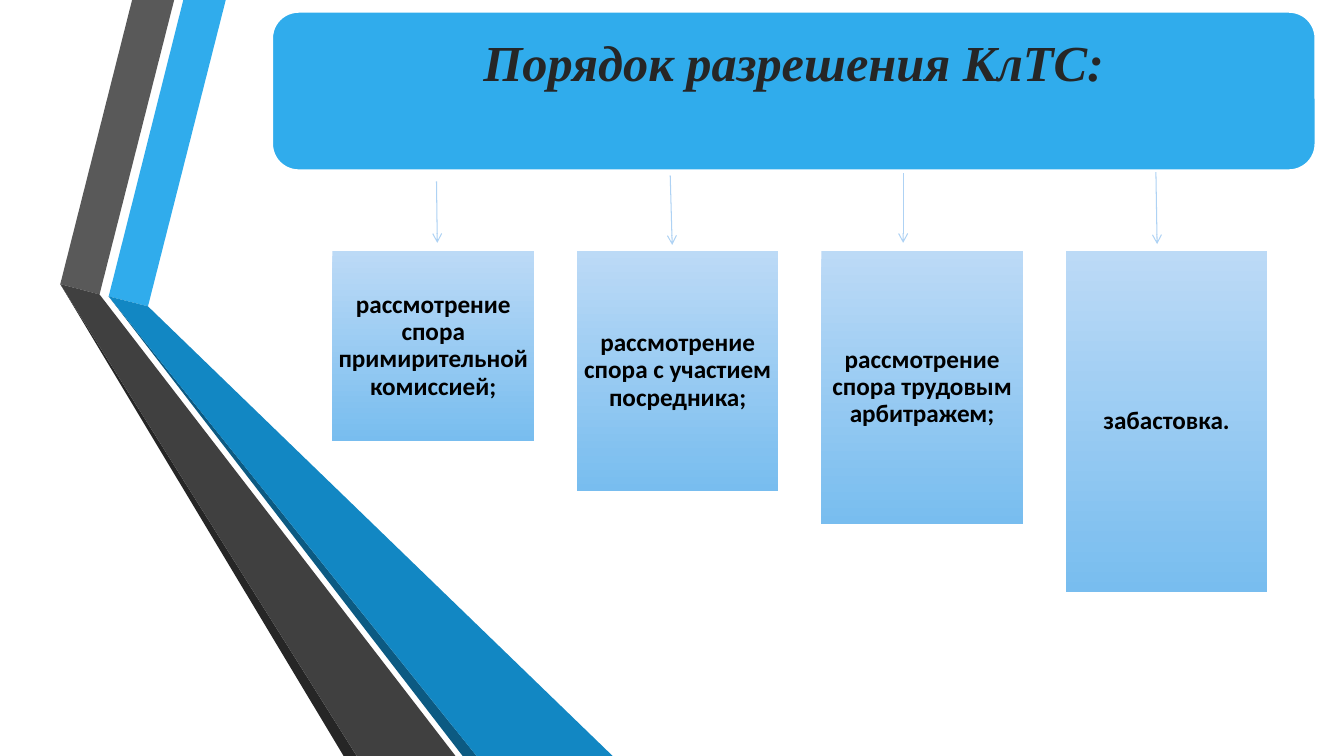
import pptx
import pptx.dml.color
import pptx.enum.shapes
import pptx.enum.text
import pptx.oxml.ns
import pptx.util
from lxml import etree

Cm = pptx.util.Cm
Pt = pptx.util.Pt
SHAPE = pptx.enum.shapes.MSO_SHAPE
ANCHOR = pptx.enum.text.MSO_ANCHOR

BANNER = (6.86, 0.3, 26.29, 3.99)
STEP_LEFT, STEP_TOP, STEP_WIDTH, STEP_PITCH = 8.38, 6.32, 5.08, 6.16

RIBBONS = [
    ("30ACEC", [(2.74, 7.47), (3.73, 7.72), (5.69, 0), (4.62, 0)]),
    ("595959", [(2.51, 7.42), (4.39, 0), (3.33, 0), (1.52, 7.16)]),
    ("262626", [(1.52, 7.16), (8.66, 19.05), (8.99, 19.05)]),
    ("0C5A82", [(2.74, 7.47), (11.66, 19.05), (12.01, 19.05)]),
    ("1287C3", [(2.74, 7.47), (12.01, 19.05), (15.44, 19.05), (3.73, 7.72)]),
    ("404040", [(1.52, 7.16), (8.99, 19.05), (11.48, 19.05), (2.51, 7.42)]),
]
# Text, box height, arrow start, arrow end
STEPS = [
    ("рассмотрение спора примирительной комиссией;", 4.8, (11, 4.57), (11.02, 6.12)),
    ("рассмотрение спора с участием посредника;", 6.05, (16.89, 4.42), (16.94, 6.17)),
    ("рассмотрение спора трудовым арбитражем;", 6.88, (22.76, 4.37), (22.76, 6.12)),
    ("забастовка.", 8.59, (29.13, 4.34), (29.16, 6.15)),
]


def rgb(value):
    return pptx.dml.color.RGBColor.from_string(value)


def fill_solid(sp, color):
    sp.shadow.inherit = False
    sp.fill.solid()
    sp.fill.fore_color.rgb = rgb(color)


def set_text(sp, text, font, size, color, anchor, inset, top_inset, italic=False):
    tf = sp.text_frame
    tf.text = text
    tf.word_wrap = True
    tf.auto_size = pptx.enum.text.MSO_AUTO_SIZE.NONE
    tf.vertical_anchor = anchor
    tf.margin_left = tf.margin_right = tf.margin_bottom = Cm(inset)
    tf.margin_top = Cm(top_inset)
    p = tf.paragraphs[0]
    p.alignment = pptx.enum.text.PP_ALIGN.CENTER
    p.line_spacing = 0.9
    p.space_before = Pt(0)
    p.font.name = font
    p.font.size = Pt(size)
    p.font.bold = True
    p.font.italic = italic
    p.font.color.rgb = rgb(color)


def add_ribbon(s, color, points):
    start, *rest = [(Cm(x), Cm(y)) for x, y in points]
    builder = s.shapes.build_freeform(*start)
    builder.add_line_segments(rest, close=True)
    sp = builder.convert_to_shape()
    fill_solid(sp, color)
    sp.line.fill.background()


def add_banner(s, text):
    """Draw the rounded panel and lay the title placeholder over it."""
    box = [Cm(v) for v in BANNER]
    sp = s.shapes.add_shape(SHAPE.ROUNDED_RECTANGLE, *box)
    fill_solid(sp, "30ACEC")
    sp.line.color.rgb = rgb("FFFFFF")
    sp.line.width = Pt(1.25)
    title = s.shapes.title
    title.left, title.top, title.width, title.height = box
    set_text(title, text, "Times New Roman", 36, "262626", ANCHOR.TOP, 0.38, 0.65,
             italic=True)
    s.shapes.element.append(title.element)


def add_step(s, text, left, height):
    sp = s.shapes.add_shape(SHAPE.RECTANGLE, Cm(left), Cm(STEP_TOP),
                            Cm(STEP_WIDTH), Cm(height))
    sp.shadow.inherit = False
    sp.line.fill.background()
    sp.fill.gradient()
    sp.fill.gradient_angle = 270
    for stop, color, position in zip(sp.fill.gradient_stops, ("BCDAF6", "78BDEF"), (0, 1)):
        stop.color.rgb = rgb(color)
        stop.position = position
    set_text(sp, text, "Calibri", 18, "000000", ANCHOR.MIDDLE, 0.03, 0.03)


def add_arrow(s, start, end):
    ends = [Cm(v) for v in start + end]
    line = s.shapes.add_connector(pptx.enum.shapes.MSO_CONNECTOR.STRAIGHT, *ends)
    line.line.color.rgb = rgb("AED2F4")
    line.line.width = Pt(0.75)
    qn = pptx.oxml.ns.qn
    etree.SubElement(line.line._get_or_add_ln(), qn("a:tailEnd"), type="arrow")
    etree.SubElement(line.element.spPr, qn("a:effectLst"))


def main():
    prs = pptx.Presentation()
    prs.slide_width, prs.slide_height = Cm(33.87), Cm(19.05)
    s = prs.slides.add_slide(prs.slide_layouts[5])
    for color, points in RIBBONS:
        add_ribbon(s, color, points)
    add_banner(s, "Порядок разрешения КлТС:")
    for i, (text, height, start, end) in enumerate(STEPS):
        add_step(s, text, STEP_LEFT + i * STEP_PITCH, height)
        add_arrow(s, start, end)
    prs.save("out.pptx")


if __name__ == "__main__":
    main()
